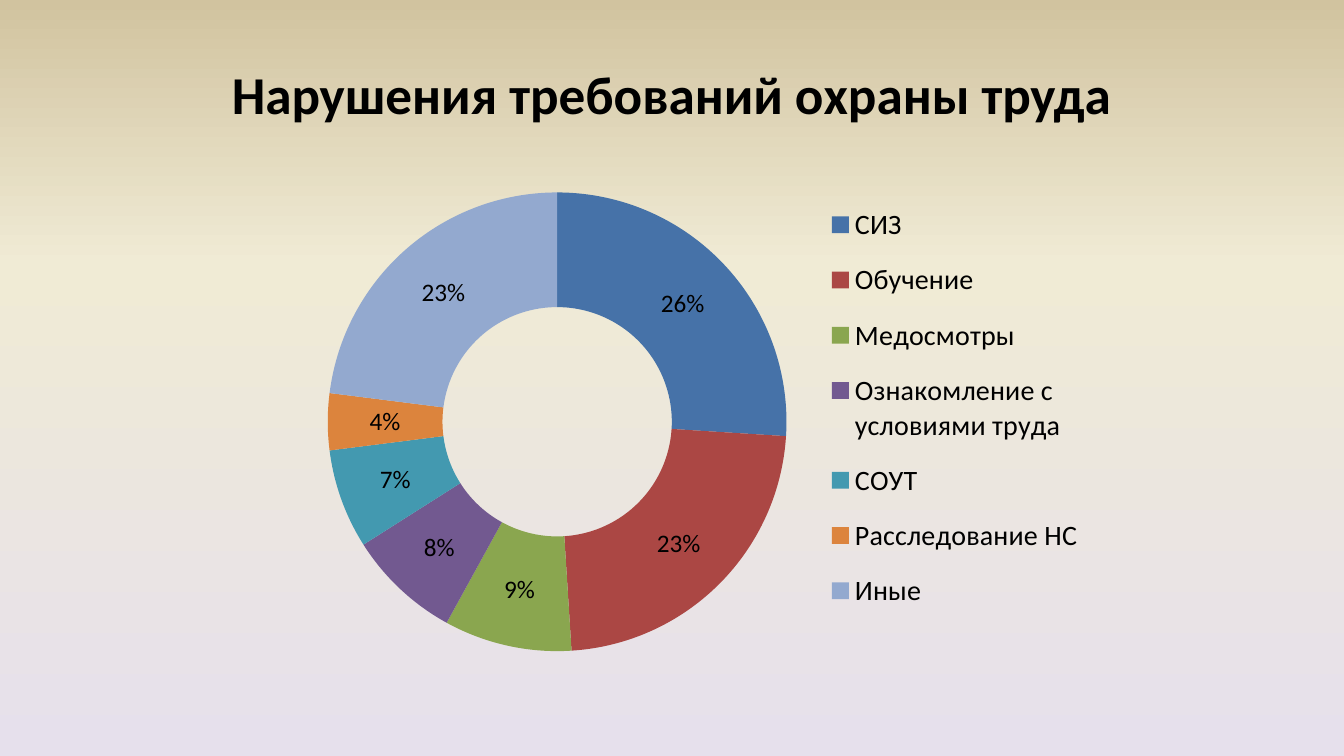
from copy import deepcopy
from dataclasses import dataclass

from lxml.etree import SubElement
from pptx import Presentation
from pptx.chart.data import CategoryChartData
from pptx.dml.color import RGBColor
from pptx.enum.chart import XL_CHART_TYPE, XL_LEGEND_POSITION
from pptx.enum.text import MSO_ANCHOR, PP_ALIGN
from pptx.oxml.ns import qn
from pptx.slide import Slide
from pptx.text.text import Font
from pptx.util import Pt

FONT_NAME = "Calibri"
BLACK = "000000"


@dataclass(frozen=True)
class Violation:
    name: str
    percent: int
    color: str


@dataclass(frozen=True)
class GradientStop:
    position: float
    color: str


@dataclass(frozen=True)
class Box:
    left: float
    top: float
    width: float
    height: float


VIOLATIONS = [
    Violation("СИЗ", 26, "4672A8"),
    Violation("Обучение", 23, "AB4744"),
    Violation("Медосмотры", 9, "8AA64F"),
    Violation("Ознакомление с условиями труда", 8, "725990"),
    Violation("СОУТ", 7, "4399B0"),
    Violation("Расследование НС", 4, "DC843D"),
    Violation("Иные", 23, "93A9CF"),
]
BACKGROUND_STOPS = [
    GradientStop(0, "E6E0EC"),
    GradientStop(0.65, "F0EBD5"),
    GradientStop(1, "D1C39F"),
]
TITLE_BOX = Box(48, 21.6, 864, 90)
CHART_BOX = Box(176.4, 101.5, 624.2, 399.6)
PLOT_SHARE = Box(0.07, 0.09, 0.57, 0.82)
LEGEND_SHARE = Box(0.66, 0.08, 0.3, 0.79)


def rgb(color: str) -> RGBColor:
    return RGBColor.from_string(color)


def style_font(font: Font, size: float, bold: bool = False, color: str = BLACK) -> None:
    font.name = FONT_NAME
    font.size = Pt(size)
    font.bold = bold
    font.color.rgb = rgb(color)


def add_text(slide: Slide, text: str, box: Box, *, size: float, bold: bool = False,
             color: str = BLACK, align: PP_ALIGN = PP_ALIGN.CENTER) -> None:
    shape = slide.shapes.add_textbox(Pt(box.left), Pt(box.top), Pt(box.width), Pt(box.height))
    frame = shape.text_frame
    frame.word_wrap = True
    frame.vertical_anchor = MSO_ANCHOR.MIDDLE
    paragraph = frame.paragraphs[0]
    paragraph.alignment = align
    run = paragraph.add_run()
    run.text = text
    style_font(run.font, size, bold, color)


def paint_background(slide: Slide, stops: list[GradientStop]) -> None:
    fill = slide.background.fill
    fill.gradient()
    fill.gradient_angle = 90
    stop_list = next(slide.element.iter(qn("a:gsLst")))
    for _ in stops[len(stop_list):]:
        stop_list.append(deepcopy(stop_list[-1]))
    for gradient_stop, stop in zip(fill.gradient_stops, stops):
        gradient_stop.position = stop.position
        gradient_stop.color.rgb = rgb(stop.color)


def set_layout(parent, following_tags: list[str], share: Box, inner: bool = False) -> None:
    for layout in parent.findall(qn("c:layout")):
        parent.remove(layout)
    layout = SubElement(parent, qn("c:layout"))
    following = next(child for child in parent if child.tag in map(qn, following_tags))
    following.addprevious(layout)
    manual = SubElement(layout, qn("c:manualLayout"))
    settings = {"layoutTarget": "inner"} if inner else {}
    settings |= {"xMode": "edge", "yMode": "edge", "x": share.left, "y": share.top,
                 "w": share.width, "h": share.height}
    for tag, value in settings.items():
        SubElement(manual, qn(f"c:{tag}")).set("val", str(value))


def add_doughnut(slide: Slide, box: Box, violations: list[Violation]) -> None:
    data = CategoryChartData()
    data.categories = [violation.name for violation in violations]
    data.add_series("Series 1", [violation.percent for violation in violations])
    chart = slide.shapes.add_chart(
        XL_CHART_TYPE.DOUGHNUT, Pt(box.left), Pt(box.top), Pt(box.width), Pt(box.height), data
    ).chart
    chart.has_title = False
    style_font(chart.font, 18)

    plot = chart.plots[0]
    plot.vary_by_categories = True
    for index, violation in enumerate(violations):
        fill = plot.series[0].points[index].format.fill
        fill.solid()
        fill.fore_color.rgb = rgb(violation.color)
    plot.has_data_labels = True
    labels = plot.data_labels
    labels.show_percentage = True
    labels.show_value = False
    labels.number_format = "0%"
    labels.number_format_is_linked = False
    style_font(labels.font, 18)

    chart.has_legend = True
    legend = chart.legend
    legend.position = XL_LEGEND_POSITION.RIGHT
    legend.include_in_layout = False
    style_font(legend.font, 20)

    chart_space = plot.series[0].format.fill and chart.element
    next(chart_space.iter(qn("c:holeSize"))).set("val", "50")
    set_layout(next(chart_space.iter(qn("c:plotArea"))), ["c:doughnutChart"], PLOT_SHARE, inner=True)
    set_layout(next(chart_space.iter(qn("c:legend"))), ["c:overlay", "c:txPr"], LEGEND_SHARE)


def main() -> None:
    presentation = Presentation()
    presentation.slide_width = Pt(960)
    presentation.slide_height = Pt(540)
    slide = presentation.slides.add_slide(presentation.slide_layouts[6])
    paint_background(slide, BACKGROUND_STOPS)
    add_text(slide, "Нарушения требований охраны труда", TITLE_BOX, size=38, bold=True)
    add_doughnut(slide, CHART_BOX, VIOLATIONS)
    presentation.save("out.pptx")


if __name__ == "__main__":
    main()
